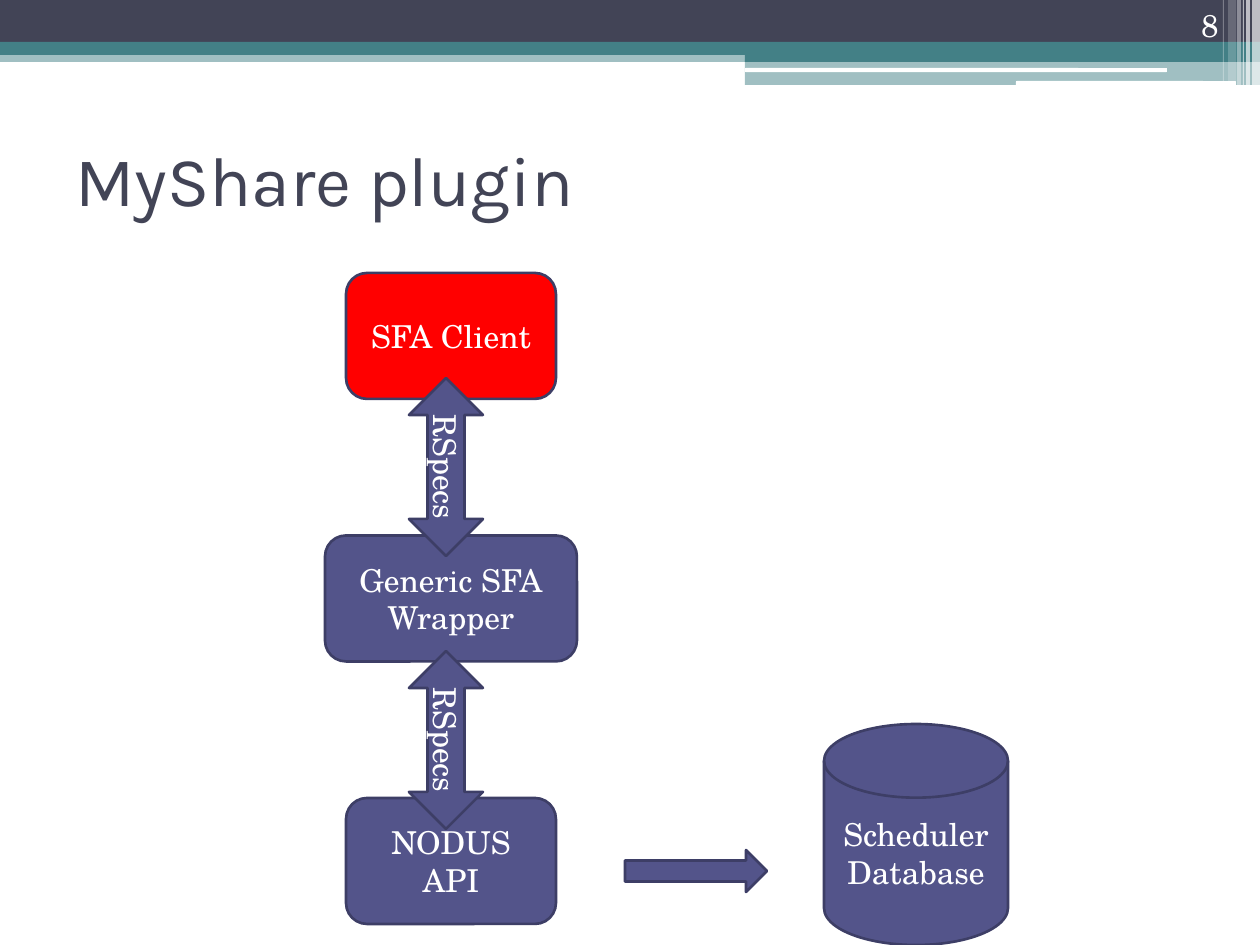
from pptx import Presentation
from pptx.dml.color import RGBColor
from pptx.enum.shapes import MSO_SHAPE
from pptx.enum.text import MSO_ANCHOR, PP_ALIGN
from pptx.oxml.ns import qn
from pptx.util import Emu, Pt
from lxml.etree import SubElement

PX_PER_INCH = 126
COLORS = {
    "dark": "424456",
    "teal": "438086",
    "white": "FFFFFF",
    "indigo": "53548A",
    "outline": "3D3E66",
    "red": "FF0000",
}
TITLE_FONT = "Karla"
BODY_FONT = "TeX Gyre Schola"


def px(length):
    return Emu(round(length * 914400 / PX_PER_INCH))


def color(name):
    return RGBColor.from_string(COLORS[name])


def style_text(frame, text, size, font_name, color_name, align, anchor):
    frame.word_wrap = True
    frame.vertical_anchor = anchor
    frame.text = text
    paragraph = frame.paragraphs[0]
    paragraph.alignment = align
    paragraph.font.size = Pt(size)
    paragraph.font.name = font_name
    paragraph.font.color.rgb = color(color_name)


def add_filled(slide, kind, box, fill, opacity=100):
    shape = slide.shapes.add_shape(kind, *map(px, box))
    shape.shadow.inherit = False
    shape.fill.solid()
    shape.fill.fore_color.rgb = color(fill)
    shape.line.fill.background()
    if opacity < 100:
        rgb = shape.fill._xPr.find(qn("a:solidFill"))[0]
        SubElement(rgb, qn("a:alpha"), val=str(opacity * 1000))
    return shape


def add_node(slide, kind, box, text="", fill="indigo", vertical=False):
    shape = add_filled(slide, kind, box, fill)
    shape.line.color.rgb = color("outline")
    shape.line.width = Pt(1.5)
    if text:
        style_text(shape.text_frame, text, 18, BODY_FONT, "white",
                   PP_ALIGN.CENTER, MSO_ANCHOR.MIDDLE)
    if vertical:
        shape.text_frame._txBody.bodyPr.set("vert", "vert")
    return shape


def add_header(slide, left, top, width):
    # Bands across the top, then the wider block on the right
    block_left = 745
    block_width = width - block_left
    for x, y, w, h, fill, opacity in (
        (0, 50, width, 12, "teal", 50),
        (0, 0, width, 42, "dark", 100),
        (0, 42, width, 13, "teal", 100),
        (block_left, 49, block_width, 13, "teal", 100),
        (block_left, 60, block_width, 25, "teal", 50),
    ):
        add_filled(slide, MSO_SHAPE.RECTANGLE, (left + x, top + y, w, h), fill, opacity)

    # White rules
    for x, y, w, h in ((745, 68, 422, 4), (1016, 81, 220, 5)):
        add_filled(slide, MSO_SHAPE.ROUNDED_RECTANGLE, (left + x, top + y, w, h), "white")

    # Translucent stripes at the right edge
    for x, w, h, opacity in (
        (1252, 8, 85, 65),
        (1246, 4, 85, 65),
        (1243, 1, 85, 60),
        (1237, 4, 85, 40),
        (1228, 8, 81, 20),
        (1223, 1, 81, 30),
    ):
        add_filled(slide, MSO_SHAPE.RECTANGLE, (left + x, top, w, h), "white", opacity)


def add_title(slide, left, top, width, height):
    title = slide.shapes.title
    title.left, title.top, title.width, title.height = map(px, (left, top, width, height))
    style_text(title.text_frame, "MyShare plugin", 40, TITLE_FONT, "dark",
               PP_ALIGN.LEFT, MSO_ANCHOR.MIDDLE)


def add_slide_number(slide, left, top, width, height):
    number = slide.shapes.add_textbox(*map(px, (left, top, width, height)))
    style_text(number.text_frame, "8", 18, BODY_FONT, "white",
               PP_ALIGN.RIGHT, MSO_ANCHOR.BOTTOM)


def add_diagram(slide, left, top, width, height):
    # Database and the arrow that leads to it
    disk_width, disk_height = 184, 221
    add_node(slide, MSO_SHAPE.FLOWCHART_MAGNETIC_DISK,
             (left + width - disk_width, top + height - disk_height,
              disk_width, disk_height), "Scheduler Database")
    add_node(slide, MSO_SHAPE.RIGHT_ARROW, (left + 300, top + 577, 142, 42))

    # Stack of layers, centred on one axis
    axis = left + 126
    box_height = 126
    pitch = 262.5
    for row, (text, box_width, fill) in enumerate((
        ("SFA Client", 210, "red"),
        ("Generic SFA Wrapper", 252, "indigo"),
        ("NODUS API", 210, "indigo"),
    )):
        add_node(slide, MSO_SHAPE.ROUNDED_RECTANGLE,
                 (axis - box_width / 2, top + row * pitch, box_width, box_height),
                 text, fill)

    # Two-way arrows between the layers
    for offset in (105, 378):
        add_node(slide, MSO_SHAPE.UP_DOWN_ARROW,
                 (left + 84, top + offset, 74, 178), "RSpecs", vertical=True)


def main():
    presentation = Presentation()
    presentation.slide_width = px(1260)
    presentation.slide_height = px(945)
    slide = presentation.slides.add_slide(presentation.slide_layouts[5])
    add_header(slide, 0, 0, 1260)
    add_title(slide, 63, 105, 1134, 147)
    add_slide_number(slide, 1126, 0, 105, 50)
    add_diagram(slide, 325, 273, 683, 672)
    presentation.save("out.pptx")


if __name__ == "__main__":
    main()
